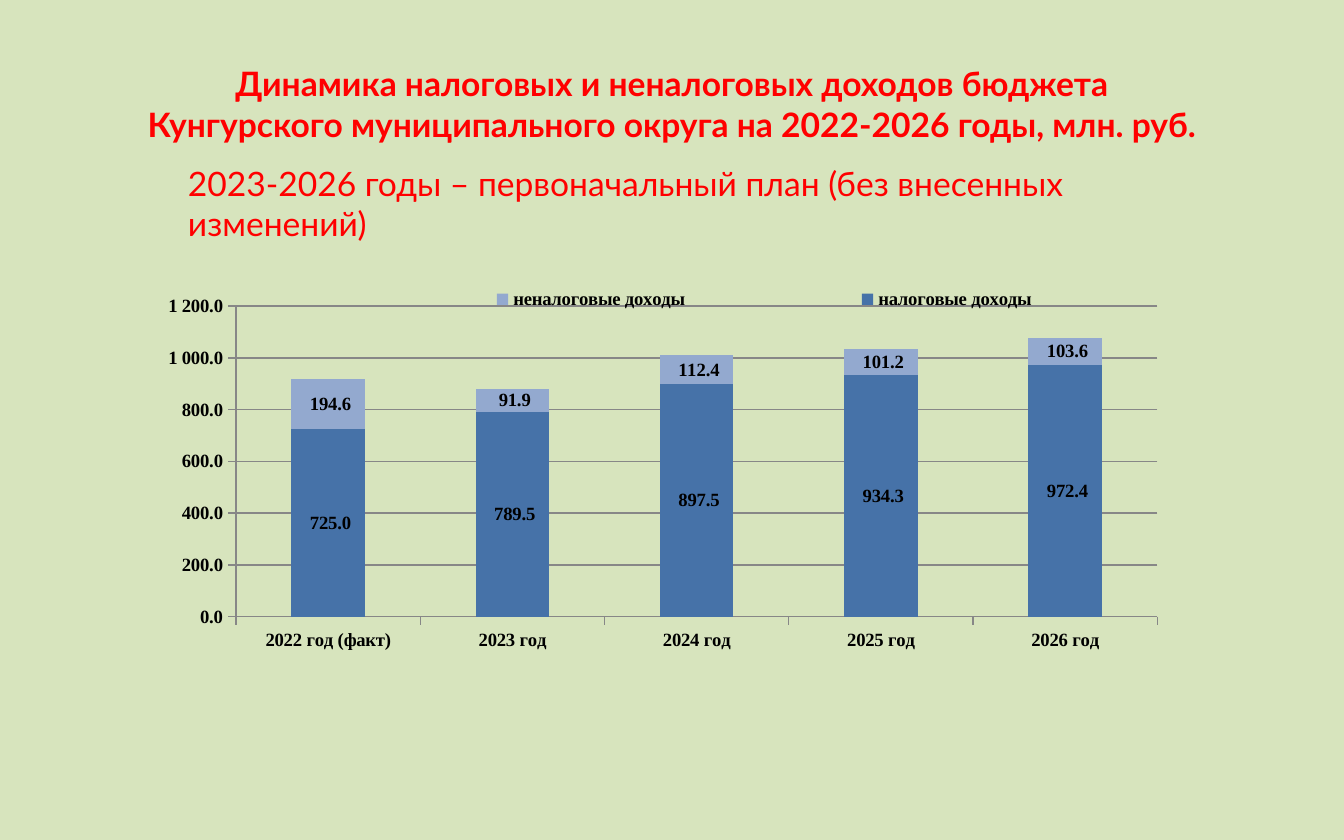
"""Build a slide on tax and non-tax budget revenue for 2022-2026."""
from lxml.etree import SubElement
from pptx import Presentation
from pptx.chart.data import CategoryChartData
from pptx.dml.color import RGBColor
from pptx.enum.chart import XL_CHART_TYPE, XL_LEGEND_POSITION, XL_TICK_MARK
from pptx.enum.text import MSO_ANCHOR, MSO_AUTO_SIZE, PP_ALIGN
from pptx.oxml.ns import qn
from pptx.util import Pt

BACKGROUND = RGBColor(0xD7, 0xE4, 0xBD)
RED = RGBColor(0xFF, 0x00, 0x00)
BLACK = RGBColor(0x00, 0x00, 0x00)
GREY = RGBColor(0x87, 0x87, 0x87)
TAX_BLUE = RGBColor(0x46, 0x72, 0xA8)
NON_TAX_BLUE = RGBColor(0x93, 0xA9, 0xCF)
NUMBER_FORMAT = r"#\ ##0.0"


def add_red_run(paragraph, text, bold):
    run = paragraph.add_run()
    run.text = text
    run.font.name = "Lato"
    run.font.size = Pt(18)
    run.font.bold = bold
    run.font.color.rgb = RED


def set_layout(parent, successor_tags, inner, **fractions):
    for old in parent.findall(qn("c:layout")):
        parent.remove(old)
    layout = parent.makeelement(qn("c:layout"))
    manual = SubElement(layout, qn("c:manualLayout"))
    if inner:
        SubElement(manual, qn("c:layoutTarget")).set("val", "inner")
    for mode in ("xMode", "yMode"):
        SubElement(manual, qn(f"c:{mode}")).set("val", "edge")
    for name, value in fractions.items():
        SubElement(manual, qn(f"c:{name}")).set("val", str(value))
    successor = next(child for child in parent if child.tag in map(qn, successor_tags))
    successor.addprevious(layout)


presentation = Presentation()
presentation.slide_width = Pt(720)
presentation.slide_height = Pt(450)
slide = presentation.slides.add_slide(presentation.slide_layouts[5])
slide.background.fill.solid()
slide.background.fill.fore_color.rgb = BACKGROUND

heading = slide.shapes.title
heading.left, heading.top, heading.width, heading.height = Pt(36), Pt(18), Pt(648), Pt(75)
heading.text_frame.vertical_anchor = MSO_ANCHOR.MIDDLE
heading_line = heading.text_frame.paragraphs[0]
heading_line.alignment = PP_ALIGN.CENTER
add_red_run(heading_line, "Динамика налоговых и неналоговых доходов бюджета", True)
heading_line.add_line_break()
add_red_run(heading_line, "Кунгурского муниципального округа на 2022-2026 годы, млн. руб.", True)

revenue = CategoryChartData(number_format=NUMBER_FORMAT)
revenue.categories = ["2022 год (факт)", "2023 год", "2024 год", "2025 год", "2026 год"]
revenue.add_series("налоговые доходы", [725.0, 789.5, 897.5, 934.3, 972.4])
revenue.add_series("неналоговые доходы", [194.6, 91.9, 112.4, 101.2, 103.6])
chart = slide.shapes.add_chart(
    XL_CHART_TYPE.COLUMN_STACKED, Pt(48.24), Pt(134.64), Pt(601.92), Pt(244.8), revenue
).chart
chart.has_title = False
chart.font.name = "Times New Roman"
chart.font.size = Pt(10)
chart.font.bold = True
chart.font.color.rgb = BLACK

columns = chart.plots[0]
columns.gap_width = 150
columns.overlap = 100
for series, colour in zip(columns.series, (TAX_BLUE, NON_TAX_BLUE)):
    series.format.fill.solid()
    series.format.fill.fore_color.rgb = colour
    labels = series.data_labels
    labels.show_value = True
    labels.number_format = NUMBER_FORMAT
    labels.number_format_is_linked = False

amounts = chart.value_axis
amounts.minimum_scale = 0
amounts.maximum_scale = 1200
amounts.major_unit = 200
amounts.tick_labels.number_format = NUMBER_FORMAT
amounts.tick_labels.number_format_is_linked = False
amounts.has_major_gridlines = True
amounts.major_gridlines.format.line.color.rgb = GREY
for axis in (chart.category_axis, amounts):
    axis.major_tick_mark = XL_TICK_MARK.OUTSIDE
    axis.format.line.color.rgb = GREY

chart.has_legend = True
chart.legend.position = XL_LEGEND_POSITION.RIGHT
chart.legend.include_in_layout = True
plot_area = chart.category_axis._element.getparent()
set_layout(plot_area, ["c:barChart"], True, x=0.13, y=0.12, w=0.82, h=0.68)
set_layout(chart.legend._element, ["c:overlay"], False, x=0.21, y=0.07, w=0.78, h=0.07)

plan_note = slide.shapes.add_textbox(Pt(93.6), Pt(83.52), Pt(555.84), Pt(28.8))
plan_note.text_frame.word_wrap = True
plan_note.text_frame.auto_size = MSO_AUTO_SIZE.SHAPE_TO_FIT_TEXT
add_red_run(
    plan_note.text_frame.paragraphs[0],
    "2023-2026 годы – первоначальный план (без внесенных изменений)",
    False,
)

presentation.save("out.pptx")
